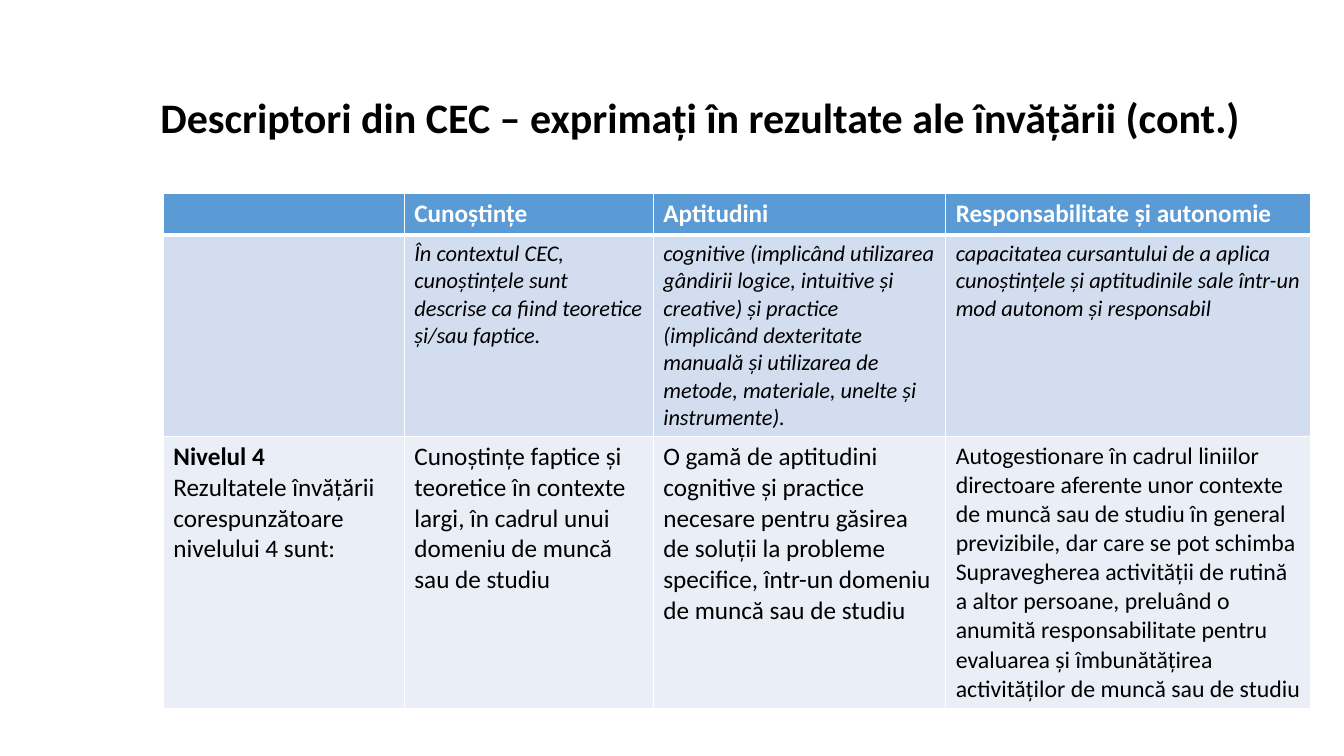
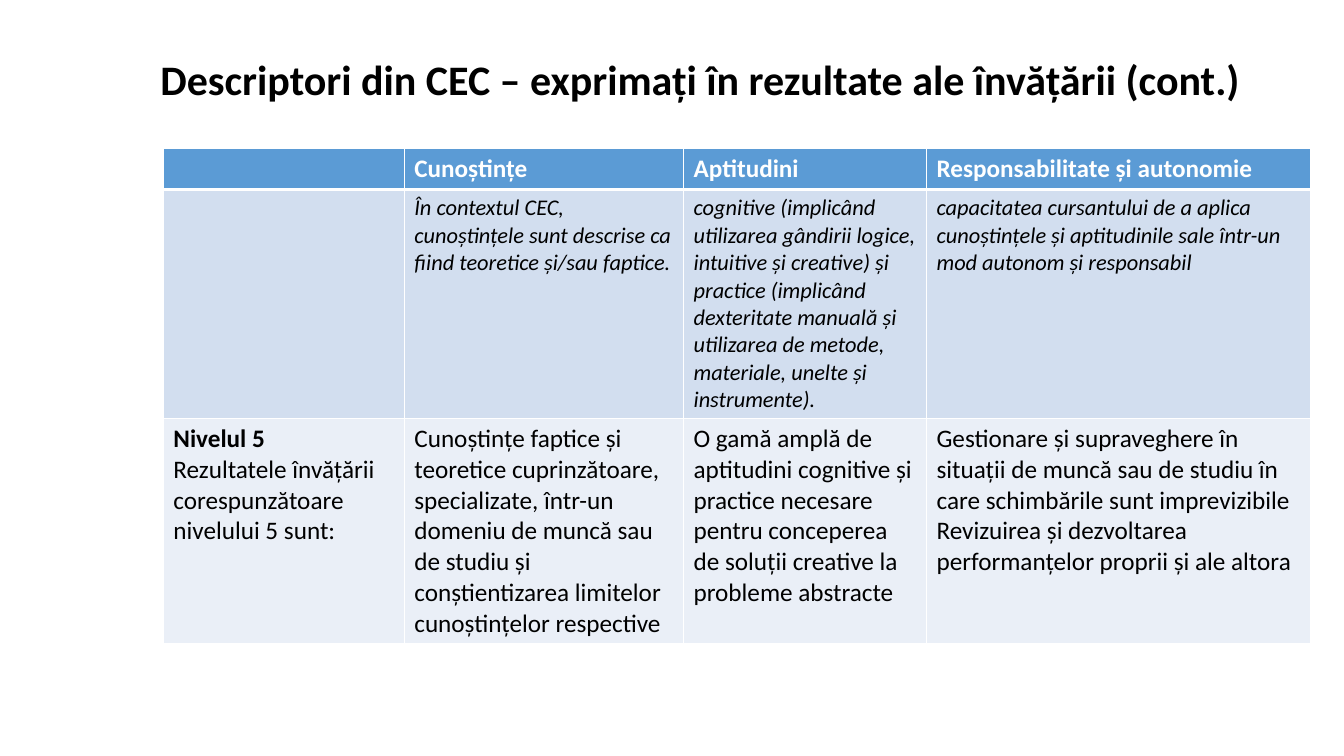
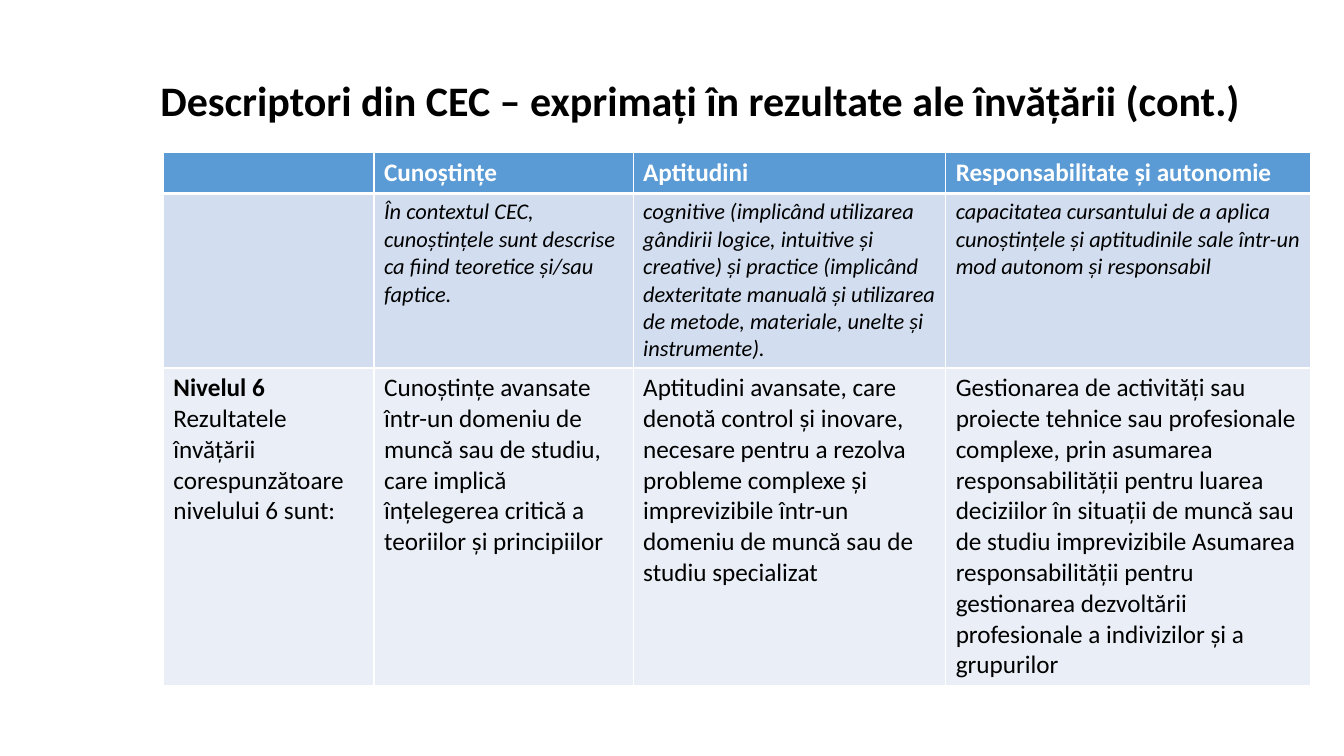
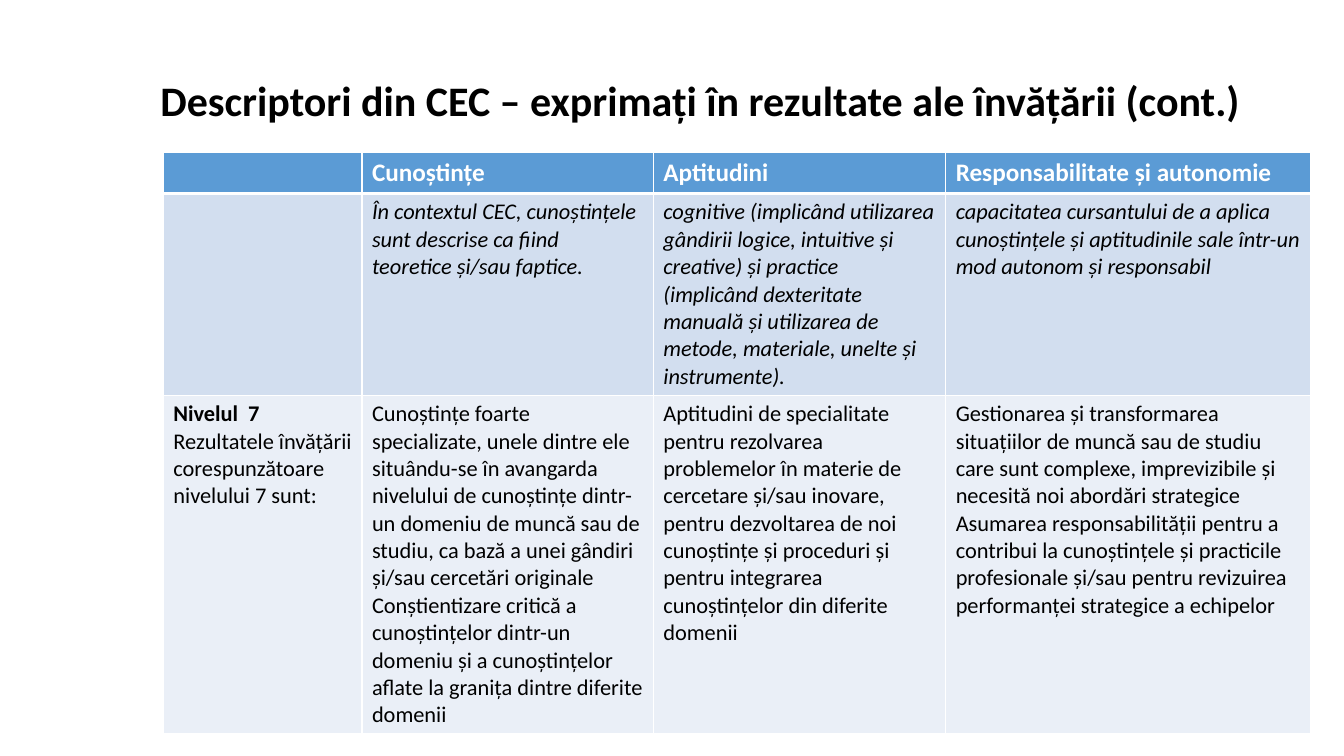
import dataclasses

import lxml.etree
import pptx
import pptx.dml.color
import pptx.enum.text
import pptx.oxml.ns
import pptx.util

EMU_PER_PX = 9144  # 100 px to the inch


@dataclasses.dataclass(frozen=True)
class Theme:
    font: str = "Calibri"
    ink: str = "000000"
    white: str = "FFFFFF"
    header_fill: str = "5B9BD5"
    intro_fill: str = "D2DEEF"
    level_fill: str = "EAEFF7"
    title_size: int = 30
    header_size: int = 18
    intro_size: int = 16
    rule: int = 1
    header_rule: int = 3


@dataclasses.dataclass(frozen=True)
class Level:
    number: int
    label: str
    label_inline: bool
    outcomes: tuple
    sizes: tuple
    title_box: tuple
    table_top: int
    table_height: int
    columns: tuple
    intro_height: int


THEME = Theme()
TITLE = "Descriptori din CEC – exprimați în rezultate ale învățării (cont.)"
HEADERS = ("", "Cunoștințe", "Aptitudini", "Responsabilitate și autonomie")
INTROS = (
    "",
    "În contextul CEC, cunoștințele sunt descrise ca fiind teoretice și/sau faptice.",
    "cognitive (implicând utilizarea gândirii logice, intuitive și creative) și practice "
    "(implicând dexteritate manuală și utilizarea de metode, materiale, unelte și instrumente).",
    "capacitatea cursantului de a aplica cunoștințele și aptitudinile sale într-un mod "
    "autonom și responsabil",
)
TABLE_LEFT = 162
HEADER_HEIGHT = 41

LEVELS = (
    Level(
        4, "Nivelul 4", False,
        (
            "Cunoștințe faptice și teoretice în contexte largi, în cadrul unui domeniu de "
            "muncă sau de studiu",
            "O gamă de aptitudini cognitive și practice necesare pentru găsirea de soluții la "
            "probleme specifice, într-un domeniu de muncă sau de studiu",
            "Autogestionare în cadrul liniilor directoare aferente unor contexte de muncă sau "
            "de studiu în general previzibile, dar care se pot schimba Supravegherea "
            "activității de rutină a altor persoane, preluând o anumită responsabilitate "
            "pentru evaluarea și îmbunătățirea activităților de muncă sau de studiu",
        ),
        (18, 18, 18, 17), (149, 60, 1160, 117), 192, 502, (239, 247, 290, 362), 200,
    ),
    Level(
        5, "Nivelul 5", False,
        (
            "Cunoștințe faptice și teoretice cuprinzătoare, specializate, într-un domeniu de "
            "muncă sau de studiu și conștientizarea limitelor cunoștințelor respective",
            "O gamă amplă de aptitudini cognitive și practice necesare pentru conceperea de "
            "soluții creative la probleme abstracte",
            "Gestionare și supraveghere în situații de muncă sau de studiu în care schimbările "
            "sunt imprevizibile Revizuirea și dezvoltarea performanțelor proprii și ale altora",
        ),
        (18, 18, 18, 18), (149, 35, 1160, 93), 147, 484, (239, 277, 241, 381), 227,
    ),
    Level(
        6, "Nivelul 6 ", True,
        (
            "Cunoștințe avansate într-un domeniu de muncă sau de studiu, care implică "
            "înțelegerea critică a teoriilor și principiilor",
            "Aptitudini avansate, care denotă control și inovare, necesare pentru a rezolva "
            "probleme complexe și imprevizibile într-un domeniu de muncă sau de studiu "
            "specializat",
            "Gestionarea de activități sau proiecte tehnice sau profesionale complexe, prin "
            "asumarea responsabilității pentru luarea deciziilor în situații de muncă sau de "
            "studiu imprevizibile Asumarea responsabilității pentru gestionarea dezvoltării "
            "profesionale a indivizilor și a grupurilor",
        ),
        (18, 18, 18, 18), (149, 51, 1160, 103), 151, 521, (209, 257, 310, 362), 173,
    ),
    Level(
        7, "Nivelul  7 ", True,
        (
            "Cunoștințe foarte specializate, unele dintre ele situându-se în avangarda "
            "nivelului de cunoștințe dintr-un domeniu de muncă sau de studiu, ca bază a unei "
            "gândiri și/sau cercetări originale Conștientizare critică a cunoștințelor "
            "dintr-un domeniu și a cunoștințelor aflate la granița dintre diferite domenii",
            "Aptitudini de specialitate pentru rezolvarea problemelor în materie de cercetare "
            "și/sau inovare, pentru dezvoltarea de noi cunoștințe și proceduri și pentru "
            "integrarea cunoștințelor din diferite domenii",
            "Gestionarea și transformarea situațiilor de muncă sau de studiu care sunt "
            "complexe, imprevizibile și necesită noi abordări strategice Asumarea "
            "responsabilității pentru a contribui la cunoștințele și practicile profesionale "
            "și/sau pentru revizuirea performanței strategice a echipelor",
        ),
        (16, 16, 16, 16), (149, 51, 1160, 103), 151, 567, (197, 289, 290, 362), 200,
    ),
)


def px(length):
    return pptx.util.Emu(length * EMU_PER_PX)


def rgb(color):
    return pptx.dml.color.RGBColor.from_string(color)


def write(paragraph, text, *, size, color=THEME.ink, bold=False, italic=False):
    run = paragraph.add_run()
    run.text = text
    run.font.name = THEME.font
    run.font.size = pptx.util.Pt(size)
    run.font.color.rgb = rgb(color)
    run.font.bold = bold
    run.font.italic = italic


def style_cell(cell, fill, top=THEME.rule, bottom=THEME.rule):
    """Fill the cell and rule its four sides; widths are in points."""
    cell.fill.solid()
    cell.fill.fore_color.rgb = rgb(fill)
    properties = cell._tc.get_or_add_tcPr()
    qn = pptx.oxml.ns.qn
    sides = (("lnL", THEME.rule), ("lnR", THEME.rule), ("lnT", top), ("lnB", bottom))
    for position, (side, width) in enumerate(sides):
        line = lxml.etree.Element(qn(f"a:{side}"), w=str(pptx.util.Pt(width)))
        solid = lxml.etree.SubElement(line, qn("a:solidFill"))
        lxml.etree.SubElement(solid, qn("a:srgbClr"), val=THEME.white)
        properties.insert(position, line)


def place_title(slide, box):
    title = slide.shapes.title
    title.left, title.top, title.width, title.height = map(px, box)
    frame = title.text_frame
    frame.word_wrap = True
    frame.auto_size = pptx.enum.text.MSO_AUTO_SIZE.NONE
    frame.vertical_anchor = pptx.enum.text.MSO_ANCHOR.MIDDLE
    heading = frame.paragraphs[0]
    heading.alignment = pptx.enum.text.PP_ALIGN.LEFT
    heading.line_spacing = 0.9
    write(heading, TITLE, size=THEME.title_size, bold=True)


def write_level_label(frame, level):
    size = level.sizes[0]
    paragraph = frame.paragraphs[0]
    write(paragraph, level.label, size=size, bold=True)
    if not level.label_inline:
        paragraph = frame.add_paragraph()
    write(paragraph,
          f"Rezultatele învățării corespunzătoare nivelului {level.number} sunt:", size=size)


def place_descriptors(slide, level, box):
    left, top, width, height = box
    descriptors = slide.shapes.add_table(
        3, len(level.columns), px(left), px(top), px(width), px(height)).table
    descriptors.horz_banding = False
    for column, column_width in zip(descriptors.columns, level.columns):
        column.width = px(column_width)
    row_heights = (HEADER_HEIGHT, level.intro_height,
                   height - HEADER_HEIGHT - level.intro_height)
    for row, row_height in zip(descriptors.rows, row_heights):
        row.height = px(row_height)

    for index, (header, intro) in enumerate(zip(HEADERS, INTROS)):
        header_cell, intro_cell, level_cell = (descriptors.cell(row, index) for row in range(3))
        style_cell(header_cell, THEME.header_fill, bottom=THEME.header_rule)
        style_cell(intro_cell, THEME.intro_fill, top=THEME.header_rule)
        style_cell(level_cell, THEME.level_fill)
        if index == 0:
            write_level_label(level_cell.text_frame, level)
            continue
        write(header_cell.text_frame.paragraphs[0], header,
              size=THEME.header_size, color=THEME.white, bold=True)
        write(intro_cell.text_frame.paragraphs[0], intro, size=THEME.intro_size, italic=True)
        write(level_cell.text_frame.paragraphs[0], level.outcomes[index - 1],
              size=level.sizes[index])


def add_level_slide(deck, level):
    slide = deck.slides.add_slide(deck.slide_layouts.get_by_name("Title Only"))
    place_title(slide, level.title_box)
    place_descriptors(slide, level, (TABLE_LEFT, level.table_top, sum(level.columns),
                                     level.table_height))


def main():
    deck = pptx.Presentation()
    deck.slide_width, deck.slide_height = px(1333), px(750)
    for level in LEVELS:
        add_level_slide(deck, level)
    deck.save("out.pptx")


if __name__ == "__main__":
    main()
